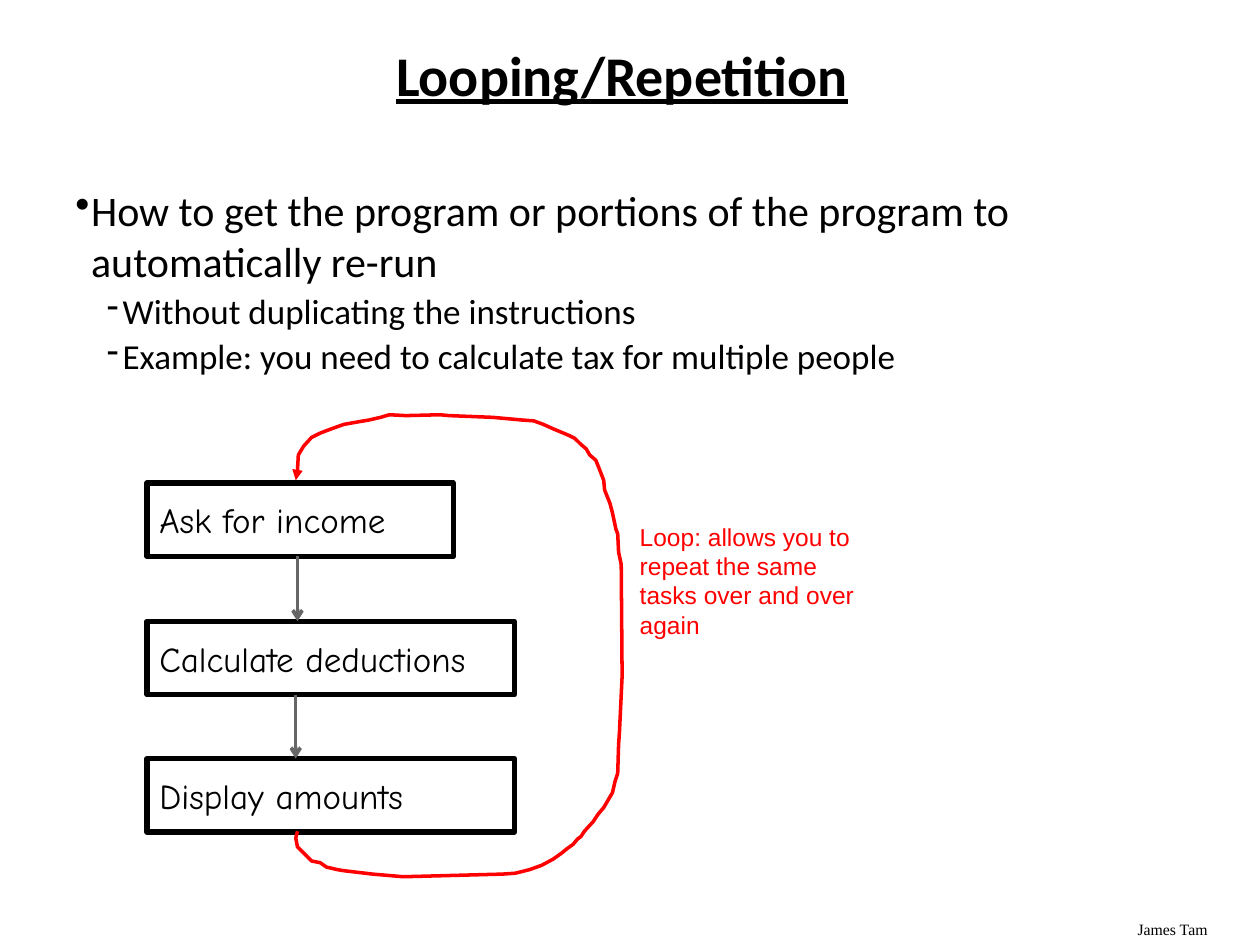
from dataclasses import dataclass

from lxml.etree import SubElement
from pptx import Presentation
from pptx.dml.color import RGBColor
from pptx.enum.shapes import MSO_CONNECTOR as Connector, MSO_SHAPE as Preset
from pptx.enum.text import MSO_ANCHOR as Anchor, PP_ALIGN as Align
from pptx.oxml.ns import qn
from pptx.util import Pt

BLACK = RGBColor(0x00, 0x00, 0x00)
GRAY = RGBColor(0x66, 0x66, 0x66)
RED = RGBColor(0xFF, 0x00, 0x00)

STEP_LEFT, STEP_HEIGHT = 84, 42

# Hand-drawn loop, from under the last step back to above the first one
LOOP_POINTS = [
    (170, 475), (169, 479), (170, 484), (175, 489), (178, 492), (183, 493),
    (186.5, 495.5), (193, 497), (196, 497.5), (213, 499.5), (230.5, 501),
    (287, 499.5), (294.5, 499), (302.5, 497), (309.5, 494.5), (316, 491),
    (321, 487.5), (324, 485), (327.5, 482.5), (330, 479.5), (332, 478),
    (334, 475), (339, 469.5), (342, 465), (345, 461.5), (350, 453),
    (351.5, 446.5), (353, 442), (353.5, 425.5), (354, 418), (355.5, 386.5),
    (355, 322.5), (353.5, 315.5), (353, 305), (352, 302.5), (350, 293),
    (348.5, 287.5), (345.5, 280), (345, 274.5), (342.5, 268), (340.5, 263),
    (337, 260), (335, 256.5), (332, 254), (328.5, 250.5), (325.5, 249),
    (322, 247.5), (316, 245), (310.5, 242.5), (305, 240.5), (298, 240),
    (281.5, 238.5), (256.5, 237.5), (251.5, 237), (232, 237.5), (222.5, 237),
    (217.5, 238.5), (211, 240), (205, 241), (196.5, 242.5), (189.5, 245),
    (183, 247.5), (178, 250), (173.5, 255), (170.5, 260), (170, 268.5),
    (169, 274.5),
]


@dataclass
class Step:
    label: str
    top: float
    width: float


@dataclass
class Bullet:
    text: str
    mark: str
    size: float
    indent: float
    hanging: float
    before: float


STEPS = [
    Step("Ask for income", 276, 175),
    Step("Calculate deductions", 355, 210),
    Step("Display amounts", 433.5, 210),
]
ARROW_CENTERS = [170, 169]

BULLETS = [
    Bullet("How to get the program or portions of the program to automatically re-run",
           "•", 24, 9, 9, 0),
    Bullet("Without duplicating the instructions", "-", 20, 27, 9, 2),
    Bullet("Example: you need to calculate tax for multiple people", "-", 20, 27, 9, 2),
]


def write(para, text: str, name: str, size: float, color=BLACK, **extra) -> None:
    span = para.add_run()
    span.text = text
    for key, value in {"name": name, "size": Pt(size), **extra}.items():
        setattr(span.font, key, value)
    span.font.color.rgb = color


def add_text_box(page, left: float, top: float, width: float, height: float):
    box = page.shapes.add_textbox(Pt(left), Pt(top), Pt(width), Pt(height))
    box.text_frame.word_wrap = True
    return box.text_frame


def set_line(shape, color: RGBColor, width: float, head: str = "") -> None:
    shape.line.color.rgb = color
    shape.line.width = Pt(width)
    if head:
        SubElement(shape.line._get_or_add_ln(), qn("a:tailEnd"), type=head)


def add_title(page) -> None:
    title = page.shapes.title
    place = {"left": 34, "top": 24, "width": 643, "height": 41}
    for key, value in place.items():
        setattr(title, key, Pt(value))
    title.text_frame.vertical_anchor = Anchor.MIDDLE
    para = title.text_frame.paragraphs[0]
    para.alignment = Align.CENTER
    para.line_spacing = 0.9
    write(para, "Looping/Repetition", "Calibri", 32, bold=True, underline=True)


def add_bullets(page, bullets: list[Bullet]) -> None:
    frame = add_text_box(page, 36, 102, 648, 348)
    for index, bullet in enumerate(bullets):
        para = frame.add_paragraph() if index else frame.paragraphs[0]
        para.space_before = Pt(bullet.before)
        properties = para._p.get_or_add_pPr()
        properties.set("marL", str(Pt(bullet.indent)))
        properties.set("indent", str(-Pt(bullet.hanging)))
        SubElement(properties, qn("a:buChar"), char=bullet.mark)
        write(para, bullet.text, "Calibri", bullet.size)


def add_step(page, step: Step) -> None:
    box = page.shapes.add_shape(Preset.RECTANGLE, Pt(STEP_LEFT), Pt(step.top),
                                Pt(step.width), Pt(STEP_HEIGHT))
    box.shadow.inherit = False
    box.fill.background()
    set_line(box, BLACK, 3)
    box.text_frame.vertical_anchor = Anchor.MIDDLE
    para = box.text_frame.paragraphs[0]
    para.alignment = Align.LEFT
    write(para, step.label, "Comic Neue", 20)


def add_down_arrow(page, center: float, top: float, bottom: float) -> None:
    arrow = page.shapes.add_connector(Connector.STRAIGHT, Pt(center), Pt(top),
                                      Pt(center), Pt(bottom))
    set_line(arrow, GRAY, 2, "arrow")
    SubElement(arrow._element.spPr, qn("a:effectLst"))


def add_loop(page, points: list[tuple[float, float]]) -> None:
    start, *rest = [(Pt(x), Pt(y)) for x, y in points]
    builder = page.shapes.build_freeform(*start)
    builder.add_line_segments(rest, close=False)
    loop = builder.convert_to_shape()
    loop.shadow.inherit = False
    loop.fill.background()
    set_line(loop, RED, 2, "triangle")


def main() -> None:
    deck = Presentation()
    deck.slide_width, deck.slide_height = Pt(720), Pt(540)
    page = deck.slides.add_slide(deck.slide_layouts[5])

    add_title(page)
    add_bullets(page, BULLETS)
    for step in STEPS:
        add_step(page, step)
    for center, upper, lower in zip(ARROW_CENTERS, STEPS, STEPS[1:]):
        add_down_arrow(page, center, upper.top + STEP_HEIGHT, lower.top)
    add_loop(page, LOOP_POINTS)

    note = add_text_box(page, 358.5, 294.5, 138, 75)
    write(note.paragraphs[0], "Loop: allows you to repeat the same tasks over and over again",
          "Arial", 14, RED)
    author = add_text_box(page, 643, 522, 72, 18)
    write(author.paragraphs[0], "James Tam", "Times New Roman", 9)

    deck.save("out.pptx")


if __name__ == "__main__":
    main()
